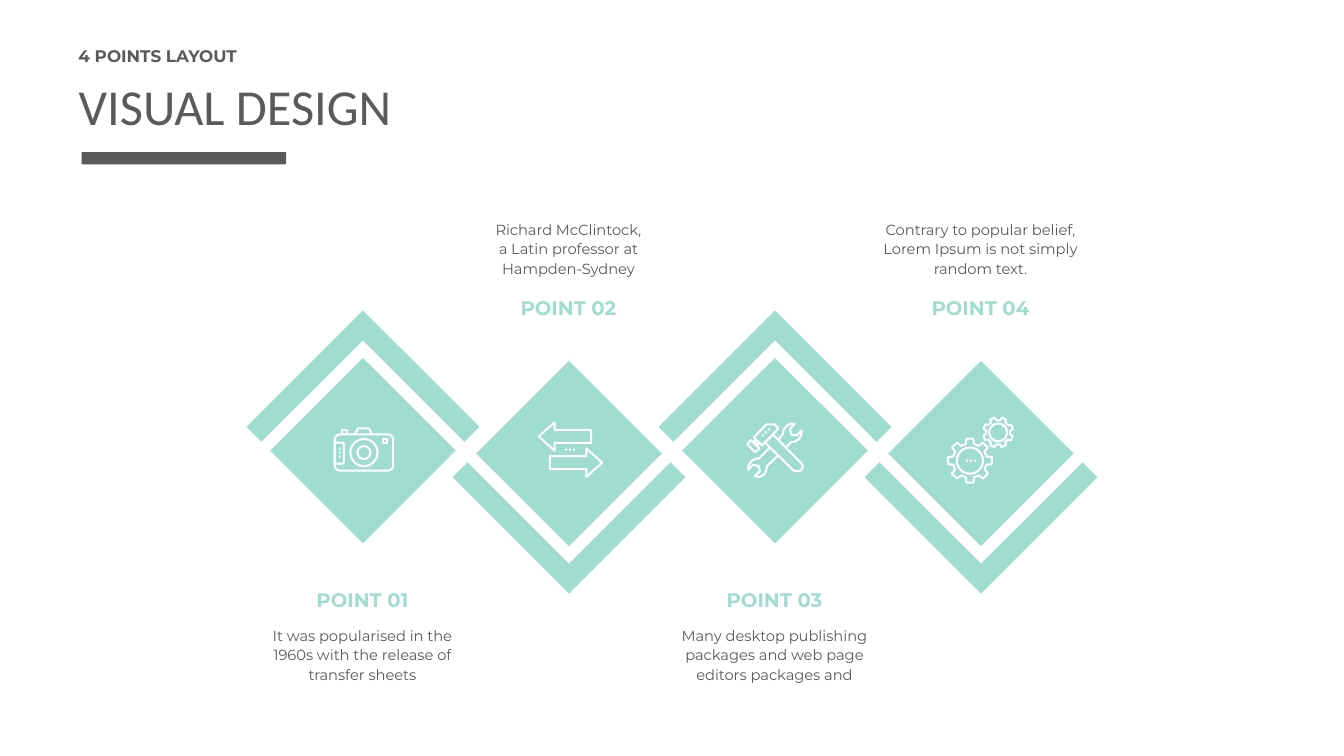
from math import cos, radians, sin

from pptx import Presentation
from pptx.dml.color import RGBColor
from pptx.enum.shapes import MSO_SHAPE
from pptx.enum.text import MSO_ANCHOR, MSO_AUTO_SIZE, PP_ALIGN
from pptx.util import Inches, Pt

RECT, ROUND = MSO_SHAPE.RECTANGLE, MSO_SHAPE.ROUNDED_RECTANGLE
OVAL, DIAMOND = MSO_SHAPE.OVAL, MSO_SHAPE.DIAMOND
ARROWS = MSO_SHAPE.LEFT_ARROW, MSO_SHAPE.RIGHT_ARROW
TOP, MIDDLE, BOTTOM = MSO_ANCHOR.TOP, MSO_ANCHOR.MIDDLE, MSO_ANCHOR.BOTTOM
LEFT, CENTER = PP_ALIGN.LEFT, PP_ALIGN.CENTER
FIXED = MSO_AUTO_SIZE.NONE

COLORS = {"gray": "5A5A5A", "mint": "A0DDCF", "white": "FFFFFF"}
FONT = "Montserrat"
FIRST, PITCH = 3.6, 6.13 / 3
ICON_Y = 4.46
STROKE = 1.44

POINTS = [
    ("POINT 01", ["It was popularised in the 1960s with the release of transfer sheets"]),
    ("POINT 02", ["Richard McClintock,", "a Latin professor at Hampden-Sydney"]),
    ("POINT 03", ["Many desktop publishing packages and web page editors packages and"]),
    ("POINT 04", ["Contrary to popular belief, Lorem Ipsum is not simply random text."]),
]

# Tool outlines in hundredths of an inch from the icon's middle
HEAD = [(-21, -12), (-8.5, -25), (-0.5, -25), (3.5, -21), (-13, -4)]
FACE = [(-27.5, -5), (-24, -9.5), (-15.5, -1), (-20, 2.5)]
NECK = [(-21, -8), (-19, -10), (-16, -6), (-18, -4)]
HANDLE = [(-10, -7), (-2, -15), (25.5, 13), (27, 15), (27.5, 17), (26.5, 20),
          (24, 21.5), (21, 21.5), (18, 20.5)]
JAW = [(3.5, -10), (8, -15.5), (8.5, -19), (11, -23), (15, -25.5), (19.5, -25.5),
       (15, -20.5), (16, -15), (21.5, -14), (26.5, -19), (26, -14), (23.5, -10),
       (20, -8), (16, -7.5), (11, -2)]
SPANNER = [(-5, -2), (-16, 9), (-19, 9), (-23.5, 11.5), (-26.5, 16), (-26.5, 20),
           (-21.5, 15), (-16, 16.5), (-15, 21.5), (-20, 26.5), (-15, 27),
           (-10.5, 24.5), (-8.5, 20), (-8, 16.5), (2.5, 6.5)]


def rgb(name):
    return RGBColor.from_string(COLORS[name])


def paint(shape, fill=None, line=None):
    shape.shadow.inherit = False
    if fill:
        shape.fill.solid()
        shape.fill.fore_color.rgb = rgb(fill)
    else:
        shape.fill.background()
    if line:
        shape.line.color.rgb = rgb(line)
        shape.line.width = Pt(STROKE)
    else:
        shape.line.fill.background()
    return shape


def place(slide, kind, box, fill=None, line=None):
    shape = slide.shapes.add_shape(kind, *map(Inches, box))
    return paint(shape, fill, line)


def trace(slide, spots, fill=None, line=None, close=True):
    spots = [(Inches(x), Inches(y)) for x, y in spots]
    path = slide.shapes.build_freeform(*spots[0])
    path.add_line_segments(spots[1:], close=close)
    return paint(path.convert_to_shape(), fill, line)


def ring(slide, x, y, size):
    place(slide, OVAL, (x - size / 2, y - size / 2, size, size), line="white")


def dots(slide, x, y, dx, dy):
    for step in (-1, 0, 1):
        box = (x + step * dx - 0.01, y + step * dy - 0.01, 0.02, 0.02)
        place(slide, RECT, box, "white")


def write(frame, lines, size, color, font=FONT, bold=False, align=CENTER,
          anchor=TOP, space=None, inset=0.05):
    frame.word_wrap = True
    frame.auto_size = FIXED
    frame.vertical_anchor = anchor
    frame.margin_left = frame.margin_right = Inches(0.1)
    frame.margin_top, frame.margin_bottom = Inches(inset), Inches(0.05)
    para = frame.paragraphs[0]
    para.alignment = align
    if space:
        para.line_spacing = space
    for i, line in enumerate(lines):
        if i:
            para.add_line_break()
        run = para.add_run()
        run.text = line
        run.font.name, run.font.size, run.font.bold = font, Pt(size), bold
        run.font.color.rgb = rgb(color)


def add_text(slide, box, lines, size, color, **style):
    frame = slide.shapes.add_textbox(*map(Inches, box)).text_frame
    write(frame, lines, size, color, **style)


def header(slide, x, y):
    title = slide.shapes.title
    title.left, title.top = Inches(x), Inches(y + 0.29)
    title.width, title.height = Inches(11.97), Inches(0.7)
    write(title.text_frame, ["VISUAL DESIGN"], 36, "gray", font="Calibri",
          align=LEFT, anchor=MIDDLE)
    add_text(slide, (x, y, 11.97, 0.34), ["4 POINTS LAYOUT"], 12, "gray",
             bold=True, align=LEFT, anchor=MIDDLE, inset=0.01)
    place(slide, RECT, (x + 0.13, y + 1.11, 2.03, 0.12), "gray")


def caption(slide, x, name, lines, above):
    left, wide = x - 1.08, 2.15
    head, body = ((2.66, 0.56), (1.93, 0.87)) if above else ((5.76, 0.56), (6.16, 0.84))
    anchor = BOTTOM if above else TOP
    add_text(slide, (left, head[0], wide, head[1]), [name], 14, "mint",
             bold=True, anchor=anchor, space=1.3, inset=0)
    add_text(slide, (left, body[0], wide, body[1]), lines, 10.5, "gray",
             anchor=anchor, space=1.1, inset=0.04)


def chain(slide, mids):
    # Diamonds, then the white zigzag that splits off their chevrons
    size = 2.31
    for i, x in enumerate(mids):
        top = 3.58 if i % 2 else 3.08
        place(slide, DIAMOND, (x - size / 2, top, size, size), "mint")
    edge = [(FIRST + (i - 1) * PITCH, 3.38 if i % 2 else 5.42) for i in range(6)]
    trace(slide, edge + [(x, y + 0.17) for x, y in reversed(edge)], "white")


def camera(slide, x, y):
    body = place(slide, ROUND, (x - 0.28, y - 0.15, 0.58, 0.36), line="white")
    body.adjustments[0] = 0.14
    hump = [(-0.08, -0.15), (-0.05, -0.21), (0.06, -0.21), (0.09, -0.15)]
    trace(slide, [(x + dx, y + dy) for dx, dy in hump], line="white", close=False)
    place(slide, RECT, (x - 0.21, y - 0.19, 0.05, 0.04), line="white")
    grip = place(slide, ROUND, (x - 0.28, y - 0.07, 0.09, 0.21), line="white")
    grip.adjustments[0] = 0.2
    place(slide, RECT, (x + 0.2, y - 0.1, 0.04, 0.04), line="white")
    for size in (0.27, 0.13):
        ring(slide, x + 0.01, y + 0.03, size)
    dots(slide, x - 0.23, y + 0.03, 0, 0.04)


def swap(slide, x, y):
    for kind, dx, dy in zip(ARROWS, (-0.3, -0.19), (-0.27, -0.01)):
        arrow = place(slide, kind, (x + dx, y + dy, 0.52, 0.28), line="white")
        arrow.adjustments[0], arrow.adjustments[1] = 0.46, 0.56
    dots(slide, x + 0.01, y, 0.04, 0)


def tools(slide, x, y):
    for part in (HEAD, FACE, NECK, HANDLE, JAW, SPANNER):
        spots = [(x + dx / 100, y + dy / 100) for dx, dy in part]
        trace(slide, spots, line="white", close=part not in (JAW, SPANNER))
    dots(slide, x - 0.09, y - 0.17, 0.03, -0.03)


def gear(slide, x, y, tip, root, turn):
    spots = []
    for tooth in range(8):
        for shift, reach in ((-14, root), (-9, tip), (9, tip), (14, root)):
            angle = radians(tooth * 45 + turn + shift)
            spots.append((x + reach * cos(angle), y + reach * sin(angle)))
    trace(slide, spots, line="white")


def gears(slide, x, y):
    gear(slide, x - 0.11, y + 0.11, 0.22, 0.17, 0)
    ring(slide, x - 0.11, y + 0.11, 0.26)
    gear(slide, x + 0.17, y - 0.17, 0.15, 0.12, 23)
    ring(slide, x + 0.17, y - 0.17, 0.18)
    dots(slide, x - 0.1, y + 0.11, 0.04, 0)


def main():
    deck = Presentation()
    deck.slide_width, deck.slide_height = Inches(13.33), Inches(7.5)
    slide = deck.slides.add_slide(deck.slide_layouts[5])
    header(slide, 0.68, 0.4)
    mids = [FIRST + i * PITCH for i in range(4)]
    chain(slide, mids)
    for i, (x, (name, lines)) in enumerate(zip(mids, POINTS)):
        caption(slide, x, name, lines, above=i % 2 == 1)
    for icon, x in zip((camera, swap, tools, gears), mids):
        icon(slide, x, ICON_Y)
    deck.save("out.pptx")


if __name__ == "__main__":
    main()
